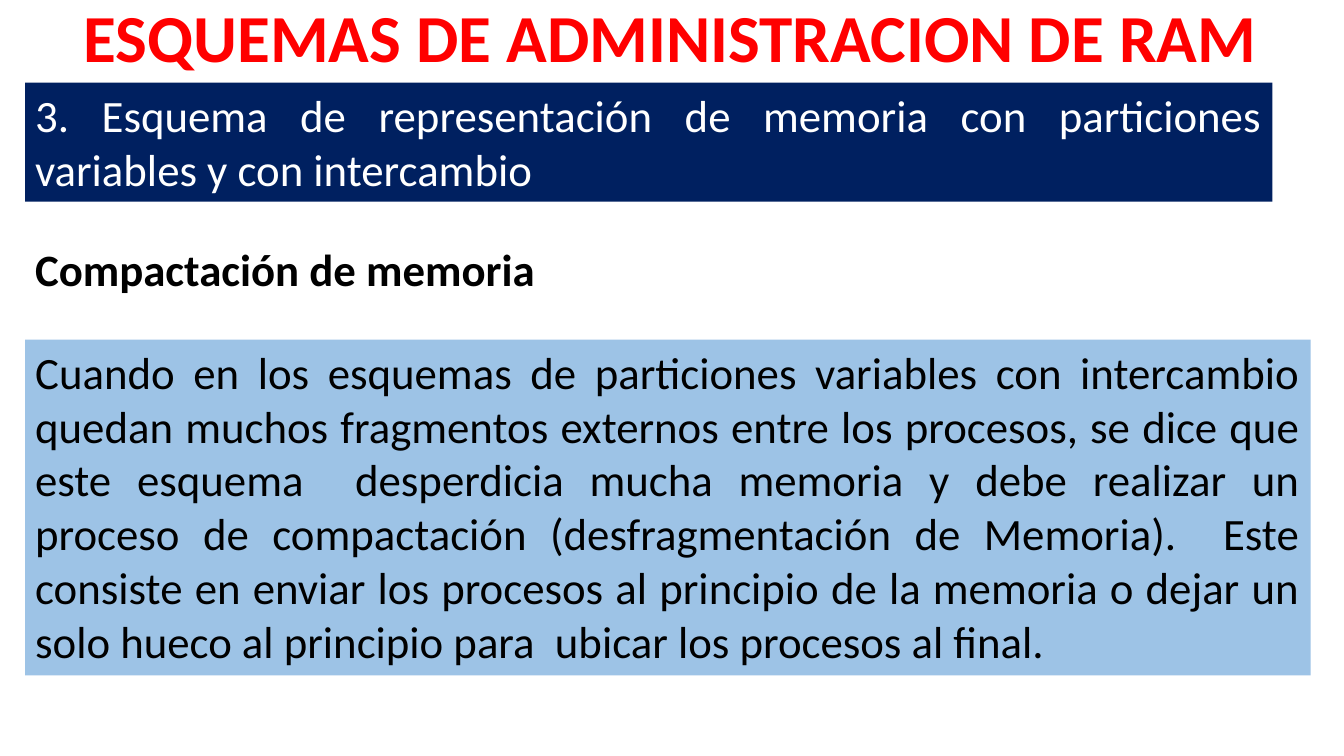
import pptx
import pptx.util
import pptx.dml.color
import pptx.enum.text

SLIDE_WIDTH, SLIDE_HEIGHT = 13.33, 7.5
LEFT_MARGIN = 0.25
ALIGN = pptx.enum.text.PP_ALIGN
TITLE = "ESQUEMAS DE ADMINISTRACION DE RAM"
SCHEME = ("3. Esquema de representación de memoria con particiones "
          "variables y con intercambio")
SUBTITLE = "Compactación de memoria"
EXPLANATION = (
    "Cuando en los esquemas de particiones variables con intercambio quedan "
    "muchos fragmentos externos entre los procesos, se dice que este esquema  "
    "desperdicia mucha memoria y debe realizar un proceso de compactación "
    "(desfragmentación de Memoria).  Este consiste en enviar los procesos al "
    "principio de la memoria o dejar un solo hueco al principio para  ubicar "
    "los procesos al final."
)


def color(hex_value):
    return pptx.dml.color.RGBColor.from_string(hex_value)


def apply_format(target, values):
    for name, value in values.items():
        setattr(target, name, value)


def inches(box):
    return [pptx.util.Inches(length) for length in box]


def write_text(shape, text, size, text_color, bold=False, alignment=ALIGN.LEFT):
    frame = shape.text_frame
    apply_format(frame, {
        "text": text,
        "word_wrap": True,
        "auto_size": pptx.enum.text.MSO_AUTO_SIZE.NONE,
        "vertical_anchor": pptx.enum.text.MSO_ANCHOR.TOP,
    })
    paragraph = frame.paragraphs[0]
    paragraph.alignment = alignment
    font = paragraph.runs[0].font
    apply_format(font, {"name": "Calibri", "size": pptx.util.Pt(size), "bold": bold})
    font.color.rgb = color(text_color)


def place_title(slide, box):
    title = slide.shapes.title
    apply_format(title, dict(zip(("left", "top", "width", "height"), inches(box))))
    write_text(title, TITLE, 48, "FF0000", bold=True)


def add_subtitle(slide, box):
    subtitle = slide.shapes.add_textbox(*inches(box))
    write_text(subtitle, SUBTITLE, 32, "000000", bold=True)


def add_panel(slide, box, text, fill_color, text_color):
    panel = slide.shapes.add_textbox(*inches(box))
    panel.fill.solid()
    panel.fill.fore_color.rgb = color(fill_color)
    write_text(panel, text, 32, text_color, alignment=ALIGN.JUSTIFY)


def build_slide(presentation):
    slide = presentation.slides.add_slide(presentation.slide_layouts.get_by_name("Title Only"))
    place_title(slide, (0.73, -0.1, 12.14, 0.91))
    add_panel(slide, (LEFT_MARGIN, 0.82, 12.37, 1.18), SCHEME, "002060", "FFFFFF")
    add_subtitle(slide, (LEFT_MARGIN, 2.35, 7.53, 0.64))
    add_panel(slide, (LEFT_MARGIN, 3.37, 12.75, 3.33), EXPLANATION, "9DC3E6", "000000")


def main():
    presentation = pptx.Presentation()
    presentation.slide_width = pptx.util.Inches(SLIDE_WIDTH)
    presentation.slide_height = pptx.util.Inches(SLIDE_HEIGHT)
    build_slide(presentation)
    presentation.save("out.pptx")


if __name__ == "__main__":
    main()
